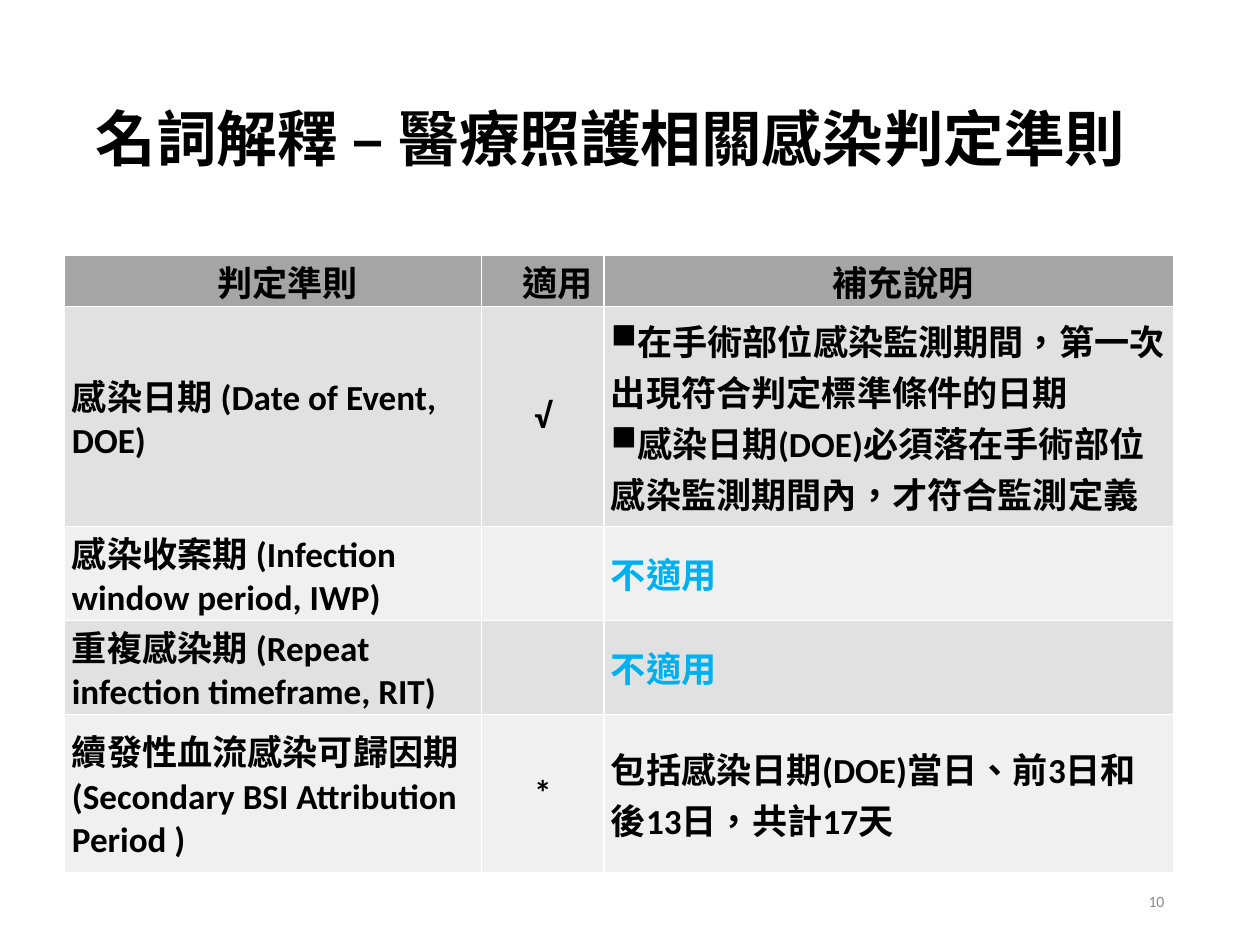
from lxml import etree
from pptx import Presentation
from pptx import util as u
from pptx.dml.color import RGBColor
from pptx.enum import lang, text
from pptx.oxml import ns

SLIDE_W, SLIDE_H = u.Inches(14.44), u.Inches(10.83)
FONT = "Calibri"
BLACK = RGBColor(0x00, 0x00, 0x00)
GRAY = RGBColor(0x8C, 0x8C, 0x8C)
BLUE = RGBColor(0x00, 0xB0, 0xF0)
HEADER_FILL = RGBColor(0xA5, 0xA5, 0xA5)
BAND_FILLS = [RGBColor(0xE1, 0xE1, 0xE1), RGBColor(0xF0, 0xF0, 0xF0)]

LEFT, CENTER, RIGHT = text.PP_ALIGN.LEFT, text.PP_ALIGN.CENTER, text.PP_ALIGN.RIGHT
COLUMN_WEIGHTS = [4.78, 1.4, 6.53]
ROW_WEIGHTS = [0.59, 2.52, 1.08, 1.08, 1.81]
HEADINGS = ["判定準則", "適用", "補充說明"]
NOT_APPLICABLE = "不適用"
CRITERIA = [
    ["感染日期 (Date of Event, DOE)", "√",
     ["在手術部位感染監測期間，第一次出現符合判定標準條件的日期",
      "感染日期(DOE)必須落在手術部位感染監測期間內，才符合監測定義"]],
    ["感染收案期 (Infection window period, IWP)", "", NOT_APPLICABLE],
    ["重複感染期 (Repeat infection timeframe, RIT)", "", NOT_APPLICABLE],
    ["續發性血流感染可歸因期 (Secondary BSI Attribution Period )", "*",
     "包括感染日期(DOE)當日、前3日和後13日，共計17天"],
]


def share(left, top, width, height):
    return (int(left * SLIDE_W), int(top * SLIDE_H),
            int(width * SLIDE_W), int(height * SLIDE_H))


def write(frame, lines, size=29, color=BLACK, bold=True, align=LEFT,
          indent=0, bullet=None, spacing=None):
    frame.word_wrap = True
    for number, line in enumerate(lines):
        paragraph = frame.add_paragraph() if number else frame.paragraphs[0]
        paragraph.alignment = align
        if spacing:
            paragraph.line_spacing = spacing
        properties = paragraph._p.get_or_add_pPr()
        properties.set("marL", "0")
        properties.set("indent", str(u.Inches(indent)))
        if bullet:
            etree.SubElement(properties, ns.qn("a:buChar")).set("char", bullet)
        run = paragraph.add_run()
        run.text = line
        font = run.font
        font.name, font.size, font.bold = FONT, u.Pt(size), bold
        font.color.rgb = color
        font.language_id = lang.MSO_LANGUAGE_ID.TRADITIONAL_CHINESE


def add_label(slide, box, label, **style):
    frame = slide.shapes.add_textbox(*box).text_frame
    frame.vertical_anchor = text.MSO_ANCHOR.MIDDLE
    write(frame, [label], **style)


def fill_cell(cell, content, fill, **style):
    cell.fill.solid()
    cell.fill.fore_color.rgb = fill
    cell.vertical_anchor = text.MSO_ANCHOR.MIDDLE
    cell.margin_left = cell.margin_right = u.Inches(0.08)
    cell.margin_top = cell.margin_bottom = 0
    if isinstance(content, list):
        write(cell.text_frame, content, bullet="■", **style)
    elif content:
        write(cell.text_frame, [content], **style)


def add_criteria_table(slide, box):
    left, top, width, height = box
    table = slide.shapes.add_table(
        len(ROW_WEIGHTS), len(COLUMN_WEIGHTS), left, top, width, height).table
    for column, weight in zip(table.columns, COLUMN_WEIGHTS):
        column.width = int(width * weight / sum(COLUMN_WEIGHTS))
    for row, weight in zip(table.rows, ROW_WEIGHTS):
        row.height = int(height * weight / sum(ROW_WEIGHTS))

    for column, heading in enumerate(HEADINGS):
        fill_cell(table.cell(0, column), heading, HEADER_FILL,
                  align=CENTER, indent=0.33)
    for row, criterion in enumerate(CRITERIA):
        for column, content in enumerate(criterion):
            fill_cell(table.cell(row + 1, column), content, BAND_FILLS[row % 2],
                      align=CENTER if column == 1 else LEFT,
                      color=BLUE if content == NOT_APPLICABLE else BLACK)


def build_definition_slide(deck):
    slide = deck.slides.add_slide(deck.slide_layouts[6])
    add_label(slide, share(0.069, 0.054, 0.863, 0.193),
              "名詞解釋 – 醫療照護相關感染判定準則", size=50, spacing=0.9)
    add_criteria_table(slide, share(0.0515, 0.27, 0.88, 0.653))
    add_label(slide, share(0.706, 0.927, 0.225, 0.054), "10",
              size=13, color=GRAY, bold=False, align=RIGHT)


def main():
    deck = Presentation()
    deck.slide_width, deck.slide_height = SLIDE_W, SLIDE_H
    build_definition_slide(deck)
    deck.save("out.pptx")


if __name__ == "__main__":
    main()
